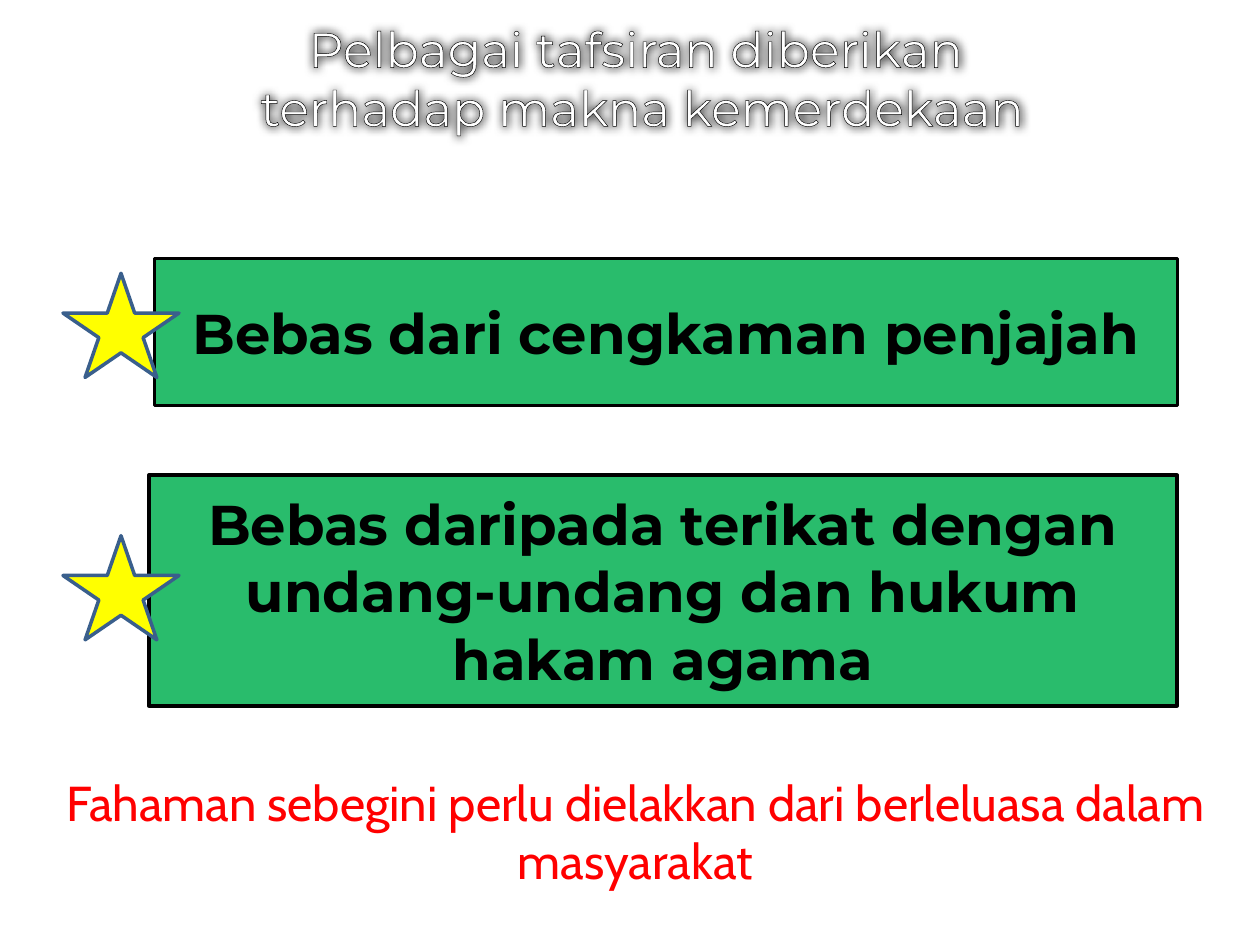
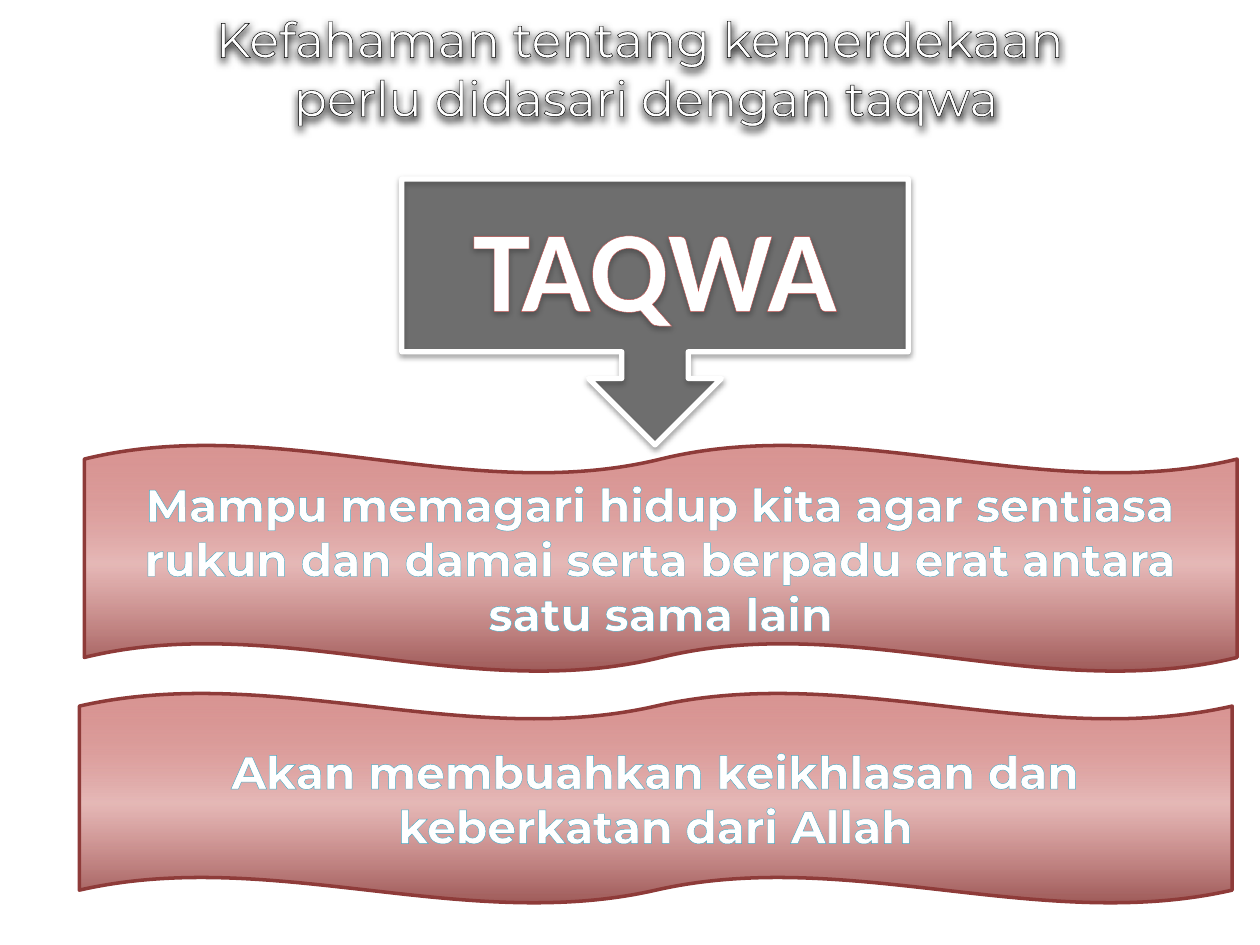
from lxml import etree
from pptx import Presentation
from pptx import util as u
from pptx.dml import color
from pptx.enum import shapes, text
from pptx.oxml import ns

HUES = {
    "black": "000000", "white": "FFFFFF", "green": "00B050",
    "yellow": "FFFF00", "navy": "3A5F8C", "red": "FF0000",
    "wine": "8E3B39", "dark": "85312F", "brick": "C25552",
    "pink": "D99694", "aqua": "4BACC6", "rust": "C0504D",
}
FONTS = {
    "title": {"name": "Montserrat", "size": u.Pt(28)},
    "bar": {"name": "Montserrat", "size": u.Pt(32), "bold": True},
    "note": {"name": "Cabin", "size": u.Pt(28)},
    "wave": {"name": "Montserrat", "size": u.Pt(26), "bold": True},
    "call": {"name": "Calibri", "size": u.Pt(66), "bold": True},
}
# Stops run upwards: position, colour, opacity (all in percent)
FADE = [(0, "dark", 80), (48, "brick", 41), (100, "pink", 100)]
KIND = shapes.MSO_SHAPE


def node(tag, parent=None, **attrs):
    """Make a DrawingML element, inside parent if one is given."""
    attrs = {key: str(val) for key, val in attrs.items()}
    name = ns.qn("a:" + tag)
    if parent is None:
        return etree.Element(name, attrs)
    return etree.SubElement(parent, name, attrs)


def tint(parent, hue, alpha=100):
    """Add a colour element with its opacity in percent."""
    clr = node("srgbClr", parent, val=HUES[hue])
    if alpha < 100:
        node("alpha", clr, val=alpha * 1000)


class Deck:
    def __init__(self):
        self.prs = Presentation()
        self.prs.slide_width = u.Cm(25.4)
        self.prs.slide_height = u.Cm(19.05)

    def page(self):
        self.slide = self.prs.slides.add_slide(self.prs.slide_layouts[6])

    def shape(self, kind, box, line, width):
        item = self.slide.shapes.add_shape(kind, *map(u.Cm, box))
        item.shadow.inherit = False
        item.line.color.rgb = color.RGBColor.from_string(HUES[line])
        item.line.width = u.Pt(width)
        return item

    def solid(self, item, hue, alpha=100):
        item.fill.solid()
        item.fill.fore_color.rgb = color.RGBColor.from_string(HUES[hue])
        if alpha < 100:
            clr = item.element.spPr.find(ns.qn("a:solidFill"))[0]
            node("alpha", clr, val=alpha * 1000)

    def fade(self, item):
        item.fill.gradient()
        props = item.element.spPr
        grad = node("gradFill", rotWithShape=1)
        stops = node("gsLst", grad)
        for pos, hue, alpha in FADE:
            tint(node("gs", stops, pos=pos * 1000), hue, alpha)
        node("lin", grad, ang=270 * 60000, scaled=0)
        props.replace(props.find(ns.qn("a:gradFill")), grad)

    def shade(self, item, alpha, blur, dist):
        """Cast a soft black shadow straight down; lengths in points."""
        item.shadow.inherit = False
        effects = item.element.spPr.find(ns.qn("a:effectLst"))
        cast = node("outerShdw", effects, blurRad=u.Pt(blur), dist=u.Pt(dist),
                    dir=90 * 60000, algn="ctr", rotWithShape=0)
        tint(cast, "black", alpha)

    def put(self, item, lines, style, hue, edge=None):
        """Fill a shape with centred lines; edge is (colour, points)."""
        frame = item.text_frame
        for row, words in enumerate(lines):
            para = frame.add_paragraph() if row else frame.paragraphs[0]
            para.alignment = text.PP_ALIGN.CENTER
            run = para.add_run()
            run.text = words
            for key, val in FONTS[style].items():
                setattr(run.font, key, val)
            run.font.color.rgb = color.RGBColor.from_string(HUES[hue])
            if edge:
                line = node("ln", w=u.Pt(edge[1]))
                tint(node("solidFill", line), edge[0])
                run._r.get_or_add_rPr().insert(0, line)

    def label(self, box, lines, style, hue, edge=None, wrap=True):
        item = self.slide.shapes.add_textbox(*map(u.Cm, box))
        item.text_frame.word_wrap = wrap
        item.text_frame.auto_size = text.MSO_AUTO_SIZE.SHAPE_TO_FIT_TEXT
        self.put(item, lines, style, hue, edge)
        return item

    def title(self, box, lines, dist):
        item = self.label(box, lines, "title", "white", ("black", 0.75), False)
        self.shade(item, 80, 5, dist)

    def body(self, item, words, style, hue, edge=None):
        item.text_frame.word_wrap = True
        item.text_frame.vertical_anchor = text.MSO_ANCHOR.MIDDLE
        self.put(item, [words], style, hue, edge)

    def bar(self, box, words):
        item = self.shape(KIND.RECTANGLE, box, "black", 2)
        self.solid(item, "green", 84)
        self.body(item, words, "bar", "black")

    def star(self, top):
        box = (1.27, top, 2.34, 2.1)
        self.solid(self.shape(KIND.STAR_5_POINT, box, "navy", 2), "yellow")

    def wave(self, box, words):
        item = self.shape(KIND.DOUBLE_WAVE, box, "wine", 2)
        self.fade(item)
        self.body(item, words, "wave", "white", ("aqua", 0.8))

    def call(self, box, words):
        item = self.shape(KIND.DOWN_ARROW_CALLOUT, box, "white", 3)
        self.solid(item, "black", 47)
        self.shade(item, 38, 3.1, 1.6)
        self.body(item, words, "call", "white", ("rust", 0.52))


def views(deck):
    deck.page()
    deck.bar((3.12, 5.21, 20.62, 2.97), "Bebas dari cengkaman penjajah")
    deck.title((4.09, 0.25, 17.45, 2.64),
               ["Pelbagai tafsiran diberikan", " terhadap makna kemerdekaan"], 0)
    deck.star(5.51)
    deck.bar((3, 9.58, 20.73, 4.65),
             "Bebas daripada terikat dengan undang-undang dan hukum hakam agama")
    deck.star(10.8)
    deck.label((0.79, 15.44, 24.03, 2.64),
               ["Fahaman sebegini perlu dielakkan dari berleluasa dalam masyarakat"],
               "note", "red")


def taqwa(deck):
    deck.page()
    deck.title((3.51, 0.05, 18.77, 2.64),
               ["Kefahaman tentang kemerdekaan", " perlu didasari dengan taqwa"], 2)
    deck.wave((1.7, 8.97, 23.24, 4.57),
              "Mampu memagari hidup kita agar sentiasa rukun dan damai "
              "serta berpadu erat antara satu sama lain")
    deck.call((8.1, 3.61, 10.21, 5.36), "TAQWA")
    deck.wave((1.6, 13.97, 23.24, 4.24),
              "Akan membuahkan keikhlasan dan keberkatan dari Allah")


def main():
    deck = Deck()
    views(deck)
    taqwa(deck)
    deck.prs.save("out.pptx")


if __name__ == "__main__":
    main()
